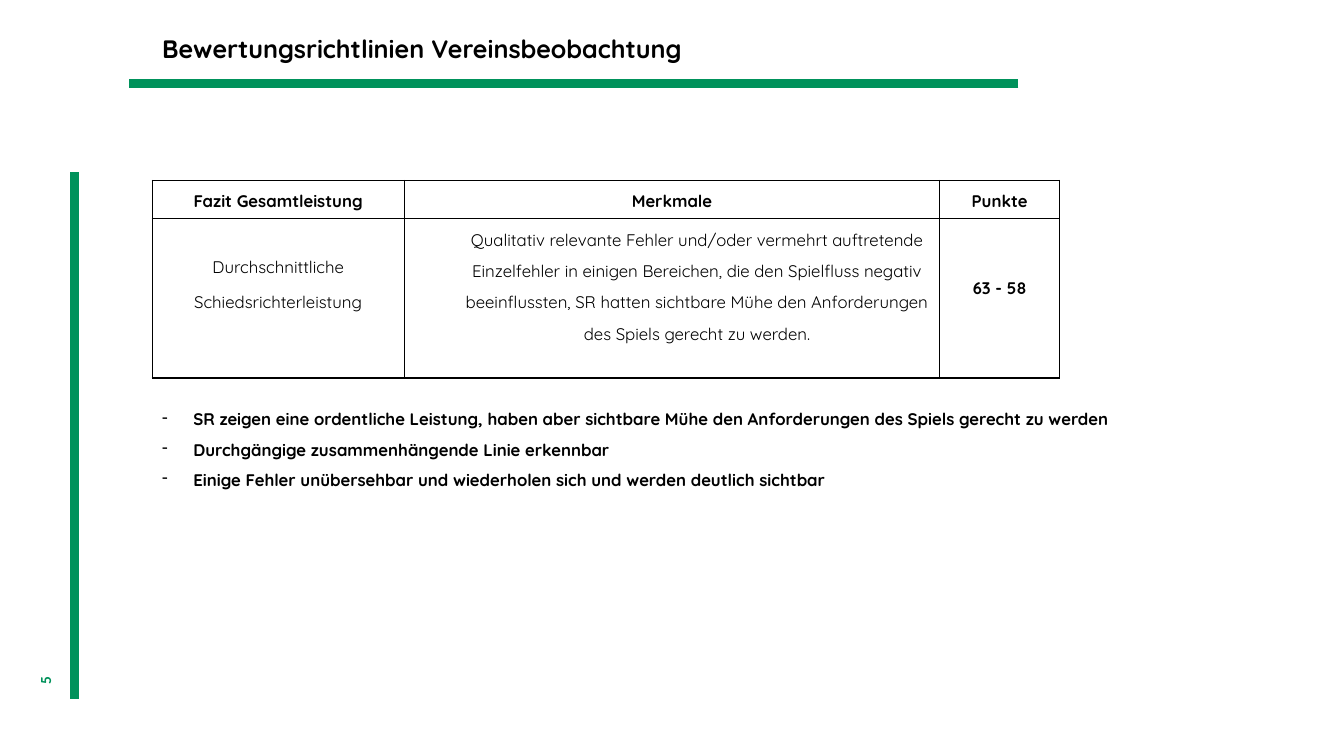
from pptx import Presentation
from pptx import util as u
from pptx.dml.color import RGBColor
from pptx.enum import shapes, text
from pptx.oxml import parse_xml
from pptx.oxml.ns import nsdecls

GREEN = RGBColor(0x00, 0x92, 0x5B)
BLACK = RGBColor(0x00, 0x00, 0x00)
FONT = "Quicksand"
CENTER = text.PP_ALIGN.CENTER
MIDDLE = text.MSO_ANCHOR.MIDDLE

HEADINGS = ["Fazit Gesamtleistung", "Merkmale", "Punkte"]
FEATURES = ("Qualitativ relevante Fehler und/oder vermehrt auftretende Einzelfehler "
            "in einigen Bereichen, die den Spielfluss negativ beeinflussten, SR hatten "
            "sichtbare Mühe den Anforderungen des Spiels gerecht zu werden.")
REMARKS = [
    "SR zeigen eine ordentliche Leistung, haben aber sichtbare Mühe den Anforderungen "
    "des Spiels gerecht zu werden",
    "Durchgängige zusammenhängende Linie erkennbar",
    "Einige Fehler unübersehbar und wiederholen sich und werden deutlich sichtbar",
]


class SlideBuilder:
    def __init__(self, page):
        self.page = page

    def bar(self, x1, y1, x2, y2):
        line = self.page.shapes.add_connector(
            shapes.MSO_CONNECTOR.STRAIGHT, *map(u.Inches, (x1, y1, x2, y2)))
        line.line.color.rgb = GREEN
        line.line.width = u.Pt(6)
        line._element.spPr.append(parse_xml(f"<a:effectLst {nsdecls('a')}/>"))

    def add_lines(self, frame, lines, size=12, font=FONT, color=BLACK, bold=True,
                  align=None, spacing=1.0, after=0, indent=0, bullet=None):
        """Fill a text frame with one paragraph per line."""
        for number, line in enumerate(lines):
            para = frame.add_paragraph() if number else frame.paragraphs[0]
            props = para._p.get_or_add_pPr()
            if indent:
                props.set("marL", str(u.Inches(indent)))
            if bullet:
                props.set("indent", str(-u.Inches(indent)))
                props.append(parse_xml(f'<a:buChar {nsdecls("a")} char="{bullet}"/>'))
            para.alignment = align
            para.line_spacing = spacing
            para.space_after = u.Pt(after)
            span = para.add_run()
            span.text = line
            span.font.name = font
            span.font.size = u.Pt(size)
            span.font.bold = bold
            span.font.color.rgb = color

    def text_box(self, x, y, width, height, lines, anchor=None, rotation=0, **style):
        box = self.page.shapes.add_textbox(*map(u.Inches, (x, y, width, height)))
        box.rotation = rotation
        box.text_frame.word_wrap = True
        box.text_frame.vertical_anchor = anchor
        self.add_lines(box.text_frame, lines, **style)

    def table(self, x, y, widths, heights):
        frame = self.page.shapes.add_table(
            len(heights), len(widths), u.Inches(x), u.Inches(y),
            u.Inches(sum(widths)), u.Inches(sum(heights)))
        grid = frame.table
        grid.first_row = grid.horz_banding = False
        for column, width in zip(grid.columns, widths):
            column.width = u.Inches(width)
        for row, height in zip(grid.rows, heights):
            row.height = u.Inches(height)
        return grid

    def cell(self, cell, lines, top=0, **style):
        cell.margin_left = cell.margin_right = u.Inches(0.07)
        cell.margin_top = u.Inches(top)
        cell.margin_bottom = 0
        props = cell._tc.get_or_add_tcPr()
        for side in ("lnL", "lnR", "lnT", "lnB"):
            props.append(parse_xml(
                f'<a:{side} {nsdecls("a")} w="{u.Pt(1)}"><a:solidFill>'
                f'<a:srgbClr val="{BLACK}"/></a:solidFill></a:{side}>'))
        cell.fill.background()
        self.add_lines(cell.text_frame, lines, align=CENTER, after=10, **style)


def main():
    deck = Presentation()
    deck.slide_width, deck.slide_height = u.Inches(13.33), u.Inches(7.5)
    slide = SlideBuilder(deck.slides.add_slide(deck.slide_layouts[6]))

    slide.bar(0.74, 1.71, 0.74, 6.93)
    slide.bar(10.1, 0.83, 1.28, 0.83)
    slide.text_box(0.2, 6.66, 0.49, 0.4, ["5"], anchor=MIDDLE, rotation=270,
                   size=11, font="Calibri", color=GREEN, align=text.PP_ALIGN.RIGHT)
    slide.text_box(1.51, 0.3, 8.66, 0.39, ["Bewertungsrichtlinien Vereinsbeobachtung"],
                   anchor=MIDDLE, size=18, spacing=0.9)

    grid = slide.table(1.51, 1.79, [2.5, 5.31, 1.19], [0.38, 1.58])
    for column, heading in enumerate(HEADINGS):
        slide.cell(grid.cell(0, column), [heading], spacing=1.5)
    slide.cell(grid.cell(1, 0), ["Durchschnittliche", "Schiedsrichterleistung"],
               top=0.38, bold=False)
    slide.cell(grid.cell(1, 1), [FEATURES], bold=False, spacing=1.5, indent=0.5)
    slide.cell(grid.cell(1, 2), ["63 - 58"], top=0.59)

    slide.text_box(1.51, 3.91, 10.06, 1.92, REMARKS, spacing=1.5, indent=0.31, bullet="-")
    deck.save("out.pptx")


if __name__ == "__main__":
    main()
